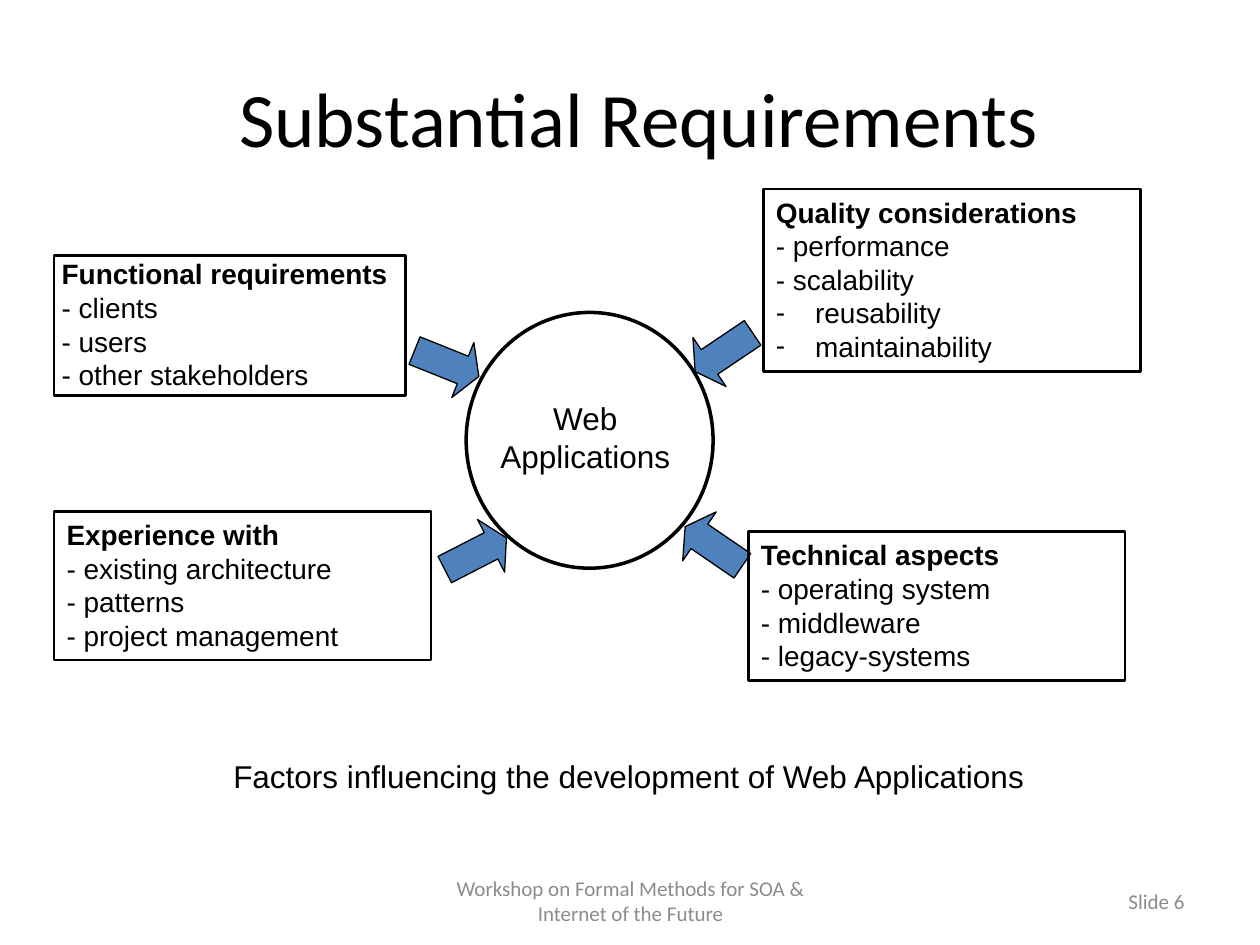
from lxml import etree
from pptx import Presentation
from pptx import util as u
from pptx.dml.color import RGBColor
from pptx.enum import shapes, text
from pptx.oxml.ns import qn

# Grid of 100 columns by 75 rows
WIDTH, HEIGHT = u.Inches(10), u.Inches(7.5)
COLUMN, ROW = WIDTH / 100, HEIGHT / 75
BLACK, GREY, BLUE = "000000", "8C8C8C", "4F81BD"
LEFT, CENTER, RIGHT = text.PP_ALIGN.LEFT, text.PP_ALIGN.CENTER, text.PP_ALIGN.RIGHT
TOP, MIDDLE = text.MSO_ANCHOR.TOP, text.MSO_ANCHOR.MIDDLE

# Heading, items, cell (left, top, width, height), insets (side, top) in points
FACTORS = [
    ("Functional requirements", ["- clients", "- users", "- other stakeholders"],
     (4.3, 20.3, 27.9, 11.1), (4.3, 0.7)),
    ("Quality considerations",
     ["- performance", "- scalability", "* reusability", "* maintainability "],
     (60.6, 15, 29.9, 14.5), (7.2, 3.6)),
    ("Experience with",
     ["- existing architecture", "- patterns", "- project management"],
     (4.3, 40.6, 29.9, 11.8), (7.2, 3.6)),
    ("Technical aspects", ["- operating system", "- middleware", "- legacy-systems"],
     (59.4, 42.2, 29.9, 11.8), (7.2, 3.6)),
]

# Left, top, rotation
ARROWS = [(32.7, 26.5, 21.9), (54.7, 25.6, 146), (35, 41.6, 332.8), (53.9, 41, 214.4)]


def color(value):
    return RGBColor.from_string(value)


def place(left, top, width, height):
    return [round(n) for n in (left * COLUMN, top * ROW, width * COLUMN, height * ROW)]


def add_run(paragraph, words, size, font, tint=BLACK, bold=False):
    run = paragraph.add_run()
    run.text = words
    run.font.size = u.Pt(size)
    run.font.name = font
    run.font.bold = bold
    run.font.color.rgb = color(tint)


def add_dash_bullet(paragraph):
    properties = paragraph._p.get_or_add_pPr()
    properties.set("marL", str(u.Inches(0.25)))
    properties.set("indent", str(-u.Inches(0.25)))
    etree.SubElement(properties, qn("a:buFont")).set("typeface", "Arial")
    etree.SubElement(properties, qn("a:buChar")).set("char", "-")


def add_label(slide, cell, words, size, font="Arial", tint=BLACK,
              align=CENTER, anchor=TOP, wrap=True):
    frame = slide.shapes.add_textbox(*place(*cell)).text_frame
    frame.word_wrap = wrap
    frame.vertical_anchor = anchor
    paragraph = frame.paragraphs[0]
    paragraph.alignment = align
    add_run(paragraph, words, size, font, tint)


def add_outline(slide, kind, cell, line_width, fill=None):
    shape = slide.shapes.add_shape(kind, *place(*cell))
    shape.shadow.inherit = False
    shape.line.color.rgb = color(BLACK)
    shape.line.width = u.Pt(line_width)
    if fill:
        shape.fill.solid()
        shape.fill.fore_color.rgb = color(fill)
    else:
        shape.fill.background()
    return shape


def add_arrow(slide, left, top, rotation):
    arrow = add_outline(slide, shapes.MSO_SHAPE.RIGHT_ARROW,
                        (left, top, 5.5, 4.7), 0.75, BLUE)
    arrow.adjustments[0] = 0.5
    arrow.adjustments[1] = 0.291
    arrow.rotation = rotation


def add_factor(slide, heading, items, cell, insets):
    box = add_outline(slide, shapes.MSO_SHAPE.RECTANGLE, cell, 1.5)
    frame = box.text_frame
    frame.word_wrap = True
    frame.vertical_anchor = TOP
    frame.margin_left = frame.margin_right = u.Pt(insets[0])
    frame.margin_top = frame.margin_bottom = u.Pt(insets[1])
    paragraph = frame.paragraphs[0]
    paragraph.alignment = LEFT
    add_run(paragraph, heading, 16, "Arial", bold=True)
    for item in items:
        paragraph = frame.add_paragraph()
        paragraph.alignment = LEFT
        if item.startswith("*"):
            add_dash_bullet(paragraph)
            item = item[1:]
        add_run(paragraph, item, 16, "Arial")


def main():
    presentation = Presentation()
    presentation.slide_width, presentation.slide_height = WIDTH, HEIGHT
    slide = presentation.slides.add_slide(presentation.slide_layouts[6])

    # Title and footer
    add_label(slide, (5, 3, 90, 12.5), " Substantial Requirements", 44,
              "Calibri", anchor=MIDDLE)
    add_label(slide, (34.2, 69.5, 31.7, 4),
              "Workshop on Formal Methods for SOA & Internet of the Future", 12,
              "Calibri", GREY, anchor=MIDDLE)
    add_label(slide, (71.7, 69.5, 23.3, 4), "Slide 6", 12,
              "Calibri", GREY, RIGHT, MIDDLE)

    # Centre circle with the arrows and factors around it
    add_outline(slide, shapes.MSO_SHAPE.OVAL, (37, 24.8, 19.6, 20.3), 2)
    for arrow in ARROWS:
        add_arrow(slide, *arrow)
    for factor in FACTORS:
        add_factor(slide, *factor)
    add_label(slide, (38.2, 31.2, 16.5, 7), "Web Applications", 18)

    # Caption
    add_label(slide, (17.2, 59.6, 65.4, 4),
              "Factors influencing the development of Web Applications", 18, wrap=False)

    presentation.save("out.pptx")


main()
